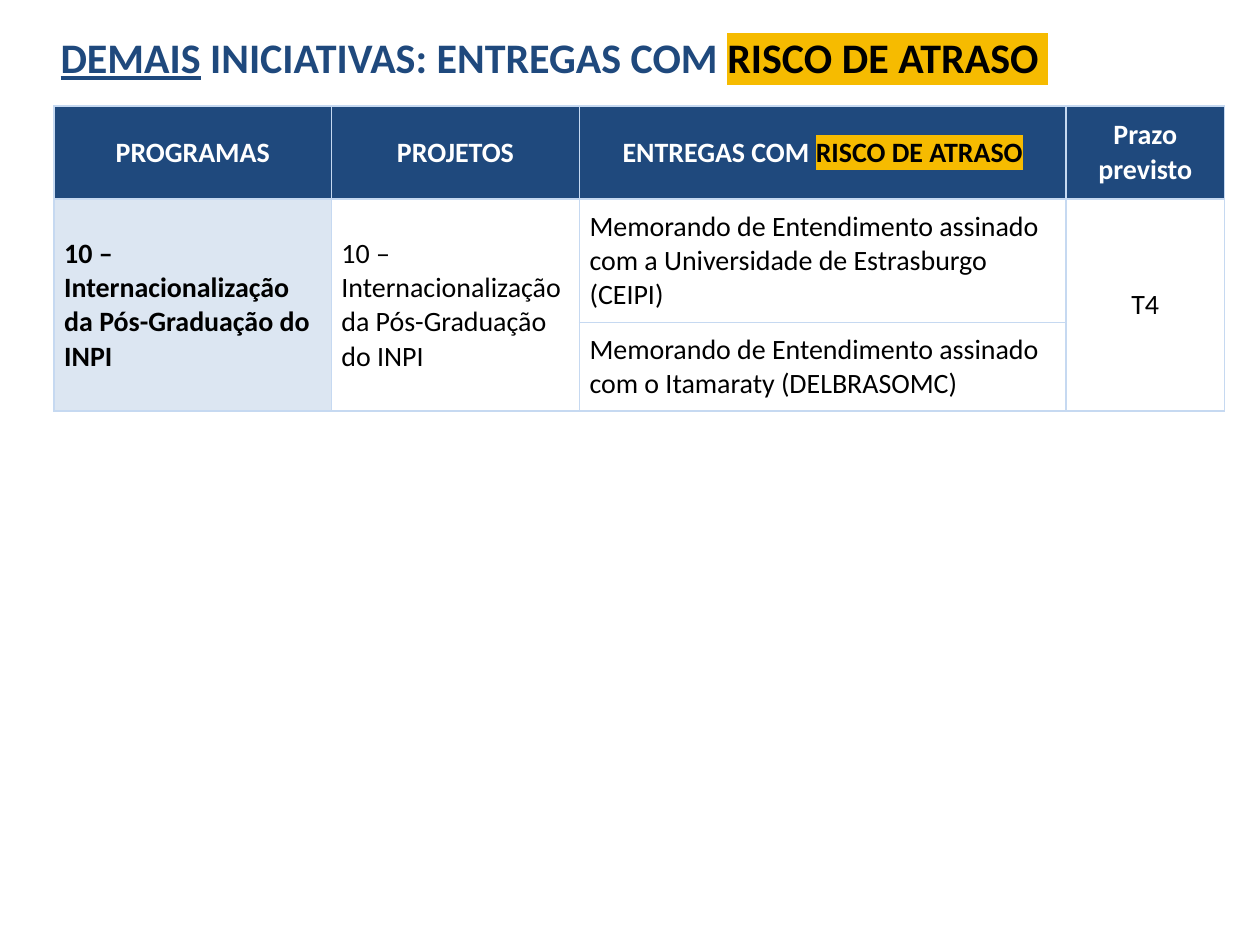
from lxml import etree
from pptx import Presentation
from pptx.dml.color import RGBColor
from pptx.enum.text import MSO_ANCHOR, PP_ALIGN
from pptx.oxml.ns import qn
from pptx.util import Inches, Pt

CENTER, LEFT = PP_ALIGN.CENTER, PP_ALIGN.LEFT
MIDDLE = MSO_ANCHOR.MIDDLE

NAVY, PALE_BLUE, BORDER_BLUE = "1F497D", "DCE6F2", "C6D9F1"
AMBER, BLACK, WHITE = "F6BB00", "000000", "FFFFFF"

COLUMN_WIDTHS = [2.2, 1.97, 3.86, 1.26]
ROW_HEIGHTS = [0.74, 0.98, 0.7]
PROGRAM = "10 – Internacionalização da Pós-Graduação do INPI"


def rgb(value):
    return RGBColor.from_string(value)


def add_solid_fill(parent, color):
    fill = etree.SubElement(parent, qn("a:solidFill"))
    etree.SubElement(fill, qn("a:srgbClr"), val=color)


def add_run(paragraph, text, size=16, color=BLACK, bold=False, underline=False, highlight=None):
    run = paragraph.add_run()
    run.text = text
    font = run.font
    font.name, font.size = "Calibri", Pt(size)
    font.bold, font.underline = bold, underline
    font.color.rgb = rgb(color)
    if highlight:
        element = etree.Element(qn("a:highlight"))
        etree.SubElement(element, qn("a:srgbClr"), val=highlight)
        run._r.get_or_add_rPr().find(qn("a:solidFill")).addnext(element)


def set_borders(cell, color, width):
    properties = cell._tc.get_or_add_tcPr()
    for index, side in enumerate(("lnL", "lnR", "lnT", "lnB")):
        line = etree.Element(qn(f"a:{side}"), w=str(Pt(width)))
        add_solid_fill(line, color)
        properties.insert(index, line)


def style_cell(cell, fill):
    cell.fill.solid()
    cell.fill.fore_color.rgb = rgb(fill)
    cell.vertical_anchor = MIDDLE
    cell.margin_left = cell.margin_right = Inches(0.08)
    cell.margin_top = cell.margin_bottom = Inches(0.08)
    set_borders(cell, BORDER_BLUE, 1)


def write_cell(cell, text, alignment=LEFT, **text_format):
    paragraph = cell.text_frame.paragraphs[0]
    paragraph.alignment = alignment
    add_run(paragraph, text, **text_format)


def add_title(slide):
    box = slide.shapes.add_textbox(Inches(0.39), Inches(0.21), Inches(9.49), Inches(0.49))
    frame = box.text_frame
    frame.word_wrap = True
    frame.margin_left = frame.margin_right = Inches(0.09)
    frame.margin_top = frame.margin_bottom = Inches(0.04)
    paragraph = frame.paragraphs[0]
    add_run(paragraph, "DEMAIS", size=24, color=NAVY, bold=True, underline=True)
    add_run(paragraph, " INICIATIVAS: ENTREGAS COM ", size=24, color=NAVY, bold=True)
    add_run(paragraph, "RISCO DE ATRASO ", size=24, bold=True, highlight=AMBER)


def add_deliveries_table(slide):
    frame = slide.shapes.add_table(
        len(ROW_HEIGHTS), len(COLUMN_WIDTHS), Inches(0.43), Inches(0.84),
        Inches(sum(COLUMN_WIDTHS)), Inches(sum(ROW_HEIGHTS)))
    table = frame.table
    for column, width in zip(table.columns, COLUMN_WIDTHS):
        column.width = Inches(width)
    for row, height in zip(table.rows, ROW_HEIGHTS):
        row.height = Inches(height)

    for row_index in range(len(ROW_HEIGHTS)):
        for column_index in range(len(COLUMN_WIDTHS)):
            body_fill = PALE_BLUE if column_index == 0 else WHITE
            style_cell(table.cell(row_index, column_index), NAVY if row_index == 0 else body_fill)
    for column_index in (0, 1, 3):
        table.cell(1, column_index).merge(table.cell(2, column_index))

    headers = ["PROGRAMAS", "PROJETOS", "ENTREGAS COM ", "Prazo previsto"]
    for column_index, header in enumerate(headers):
        write_cell(table.cell(0, column_index), header, CENTER, color=WHITE, bold=True)
    add_run(table.cell(0, 2).text_frame.paragraphs[0], "RISCO DE ATRASO",
            bold=True, highlight=AMBER)

    write_cell(table.cell(1, 0), PROGRAM, bold=True)
    write_cell(table.cell(1, 1), PROGRAM)
    write_cell(table.cell(1, 2),
               "Memorando de Entendimento assinado com a Universidade de Estrasburgo (CEIPI)")
    write_cell(table.cell(2, 2),
               "Memorando de Entendimento assinado com o Itamaraty (DELBRASOMC)")
    write_cell(table.cell(1, 3), "T4", CENTER)


def main():
    presentation = Presentation()
    presentation.slide_width, presentation.slide_height = Inches(10), Inches(7.5)
    slide = presentation.slides.add_slide(presentation.slide_layouts[6])
    add_deliveries_table(slide)
    add_title(slide)
    presentation.save("out.pptx")


if __name__ == "__main__":
    main()
